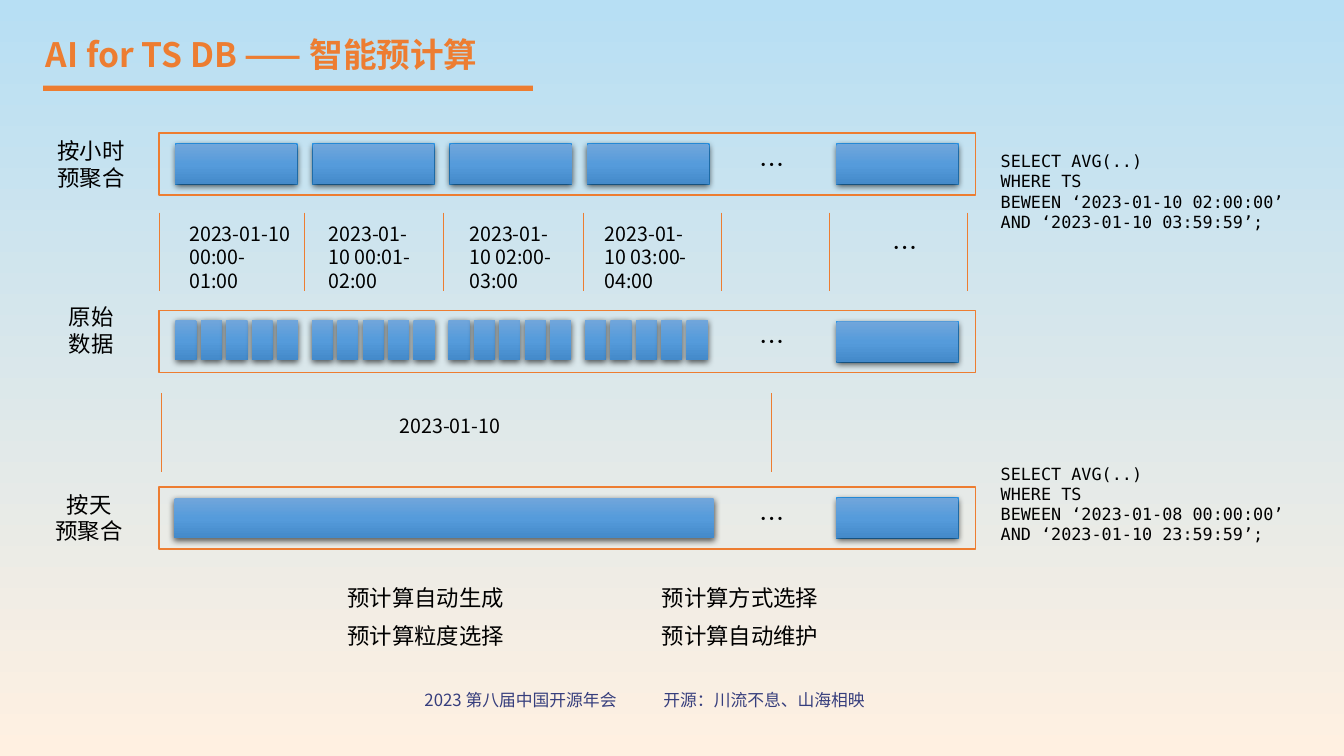
from dataclasses import dataclass

from lxml import etree
from pptx import Presentation
from pptx import util as u
from pptx.dml import color
from pptx.enum import shapes, text
from pptx.oxml import ns


@dataclass(frozen=True)
class Theme:
    sans: str = "Noto Sans CJK SC"
    mono: str = "DejaVu Sans Mono"
    accent: str = "ED7D31"
    ink: str = "000000"
    footer: str = "363E7D"
    backing_line: str = "2DA3FD"
    sky: tuple = ("B7DFF4", "FFF0E1")
    bar: tuple = ("71A6DB", "559BDB", "448ACA")
    backing: tuple = ("9BD9FB", "C2E6FB", "E1F2FD")
    title_size: float = 24
    dots_size: float = 18
    label_size: float = 16
    date_size: float = 14
    small_size: float = 12


def rgb(value):
    return color.RGBColor.from_string(value)


def add_child(parent, tag, **attributes):
    return etree.SubElement(parent, ns.qn(tag), attributes)


def gradient(owner, fill, colours, angle):
    """Spread the colours evenly along the given angle."""
    fill.gradient()
    fill.gradient_angle = angle
    stops = owner.find(".//" + ns.qn("a:gsLst"))
    for stop in list(stops):
        stops.remove(stop)
    for i, value in enumerate(colours):
        stop = add_child(stops, "a:gs", pos=str(100000 * i // (len(colours) - 1)))
        add_child(stop, "a:srgbClr", val=value)


class Board:
    def __init__(self, slide, theme):
        self.slide, self.theme = slide, theme
        gradient(slide.element, slide.background.fill, theme.sky, 270)

    def text(self, content, x, y, w, h, size=None, font=None, ink=None, bold=False,
             centre=False, wrap=True, spacing=None, before=0):
        box = self.slide.shapes.add_textbox(u.Cm(x), u.Cm(y), u.Cm(w), u.Cm(h))
        frame = box.text_frame
        frame.word_wrap = wrap
        for i, line in enumerate(content.split("\n")):
            para = frame.paragraphs[0] if i == 0 else frame.add_paragraph()
            para.alignment = text.PP_ALIGN.CENTER if centre else text.PP_ALIGN.LEFT
            if spacing:
                para.line_spacing = spacing
            if i and before:
                para.space_before = u.Pt(before)
            run = para.add_run()
            run.text = line
            run.font.size = u.Pt(size or self.theme.label_size)
            run.font.bold = bold
            run.font.color.rgb = rgb(ink or self.theme.ink)
            run.font.name = font or self.theme.sans
            add_child(run.font._element, "a:ea", typeface=run.font.name)

    def box(self, x, y, w, h, kind=shapes.MSO_SHAPE.RECTANGLE, fill=None, line=None):
        shape = self.slide.shapes.add_shape(kind, u.Cm(x), u.Cm(y), u.Cm(w), u.Cm(h))
        shape.shadow.inherit = False
        if fill:
            shape.fill.solid()
            shape.fill.fore_color.rgb = rgb(fill)
        else:
            shape.fill.background()
        if line:
            shape.line.color.rgb = rgb(line)
            shape.line.width = u.Pt(1)
        else:
            shape.line.fill.background()
        return shape

    def backing(self, x, y, w, h):
        shape = self.box(x, y, w, h, line=self.theme.backing_line)
        gradient(shape.element, shape.fill, self.theme.backing, 315)

    def bar(self, x, y, w, h):
        shape = self.box(x, y, w, h, shapes.MSO_SHAPE.ROUNDED_RECTANGLE)
        shape.adjustments[0] = 0.05
        gradient(shape.element, shape.fill, self.theme.bar, 270)
        effects = shape.element.spPr.find(ns.qn("a:effectLst"))
        shadow = add_child(effects, "a:outerShdw", blurRad=str(u.Pt(4.5)),
                           dist=str(u.Pt(1.5)), dir="5400000", rotWithShape="0")
        black = add_child(shadow, "a:srgbClr", val=self.theme.ink)
        add_child(black, "a:alpha", val="63000")

    def divider(self, x, top, height):
        line = self.slide.shapes.add_connector(
            shapes.MSO_CONNECTOR.STRAIGHT, u.Cm(x), u.Cm(top), u.Cm(x), u.Cm(top + height))
        line.line.color.rgb = rgb(self.theme.accent)
        line.line.width = u.Pt(0.5)
        add_child(line.element.spPr, "a:effectLst")

    def dots(self, x, y):
        self.text("…", x, y, 1.96, 1.02, size=self.theme.dots_size, centre=True)


def build(board):
    theme = board.theme
    bar_w, bar_h, bar_inset = 3.07, 1.02, 0.28
    first_x, last_x = 4.42, 21.08
    hour_y, raw_y, day_y = 3.35, 7.82, 12.27

    # Title and footer
    board.text("AI for TS DB —— 智能预计算", 0.91, 0.74, 12.4, 1.27, size=theme.title_size,
               ink=theme.accent, bold=True, wrap=False)
    board.box(1.09, 2.16, 12.34, 0.13, fill=theme.accent)
    for footer, x, w in (("2023 第八届中国开源年会", 9.63, 6.98),
                         ("开源：川流不息、山海相映", 16.2, 6.12)):
        board.text(footer, x, 17.26, w, 0.76, size=theme.small_size, ink=theme.footer,
                   centre=True)

    # Three data rows: label, frame, ellipsis and last block
    for label, x, y in (("按小时\n预聚合", 0.58, hour_y), ("原始\n数据", 0.58, raw_y),
                        ("按天\n预聚合", 0.53, day_y)):
        board.text(label, x, y - 0.02 if y == hour_y else y - 0.3 if y == raw_y else y - 0.03,
                   3.43, 1.63, centre=True)
        board.box(4.01, y, 20.57, 1.57, line=theme.accent)
        board.backing(last_x, y + bar_inset, bar_w, bar_h)
        board.bar(last_x, y + bar_inset, bar_w, bar_h)
        board.dots(18.47, y + bar_inset)

    # Hourly blocks, raw slices and the daily block
    for hour in range(4):
        hour_x = first_x + 3.46 * hour
        board.backing(hour_x, hour_y + bar_inset, bar_w, bar_h)
        board.bar(hour_x, hour_y + bar_inset, bar_w, bar_h)
        for part in range(5):
            board.bar(first_x + 3.44 * hour + 0.64 * part, 8.06, 0.54, bar_h)
    board.bar(4.39, day_y + bar_inset, 13.61, bar_h)

    # Time spans between the rows
    for x in (4.01, 7.67, 11.18, 14.71, 18.19, 20.9, 24.38):
        board.divider(x, 5.36, 1.98)
    for x in (4.06, 19.43):
        board.divider(x, 9.91, 1.98)
    for span, x, w in (("00:00-\n01:00", 4.52, 3.38), ("00:01-\n02:00", 8.03, 3),
                       ("02:00-\n03:00", 11.58, 3), ("03:00-\n04:00", 14.99, 2.9)):
        board.text("2023-01-10 " + span, x, 5.46, w, 2.06, size=theme.date_size)
    board.dots(21.84, 5.74)
    board.text("2023-01-10", 8.38, 10.31, 5.92, 0.86, size=theme.date_size, centre=True)

    # Queries
    for span, y in (("BEWEEN ‘2023-01-10 02:00:00’ AND ‘2023-01-10 03:59:59’;", 3.68),
                    ("BEWEEN ‘2023-01-08 00:00:00’\nAND ‘2023-01-10 23:59:59’;", 11.56)):
        board.text("SELECT AVG(..)\nWHERE TS\n" + span, 24.97, y, 8.36, 2.4,
                   size=theme.small_size, font=theme.mono)

    # Capabilities
    for points, x in (("预计算自动生成\n预计算粒度选择", 8.51),
                      ("预计算方式选择\n预计算自动维护", 16.43)):
        board.text(points, x, 14.67, 6.5, 2.3, spacing=0.9, before=10)


def main():
    deck = Presentation()
    deck.slide_width, deck.slide_height = u.Cm(33.87), u.Cm(19.05)
    build(Board(deck.slides.add_slide(deck.slide_layouts[6]), Theme()))
    deck.save("out.pptx")


if __name__ == "__main__":
    main()
